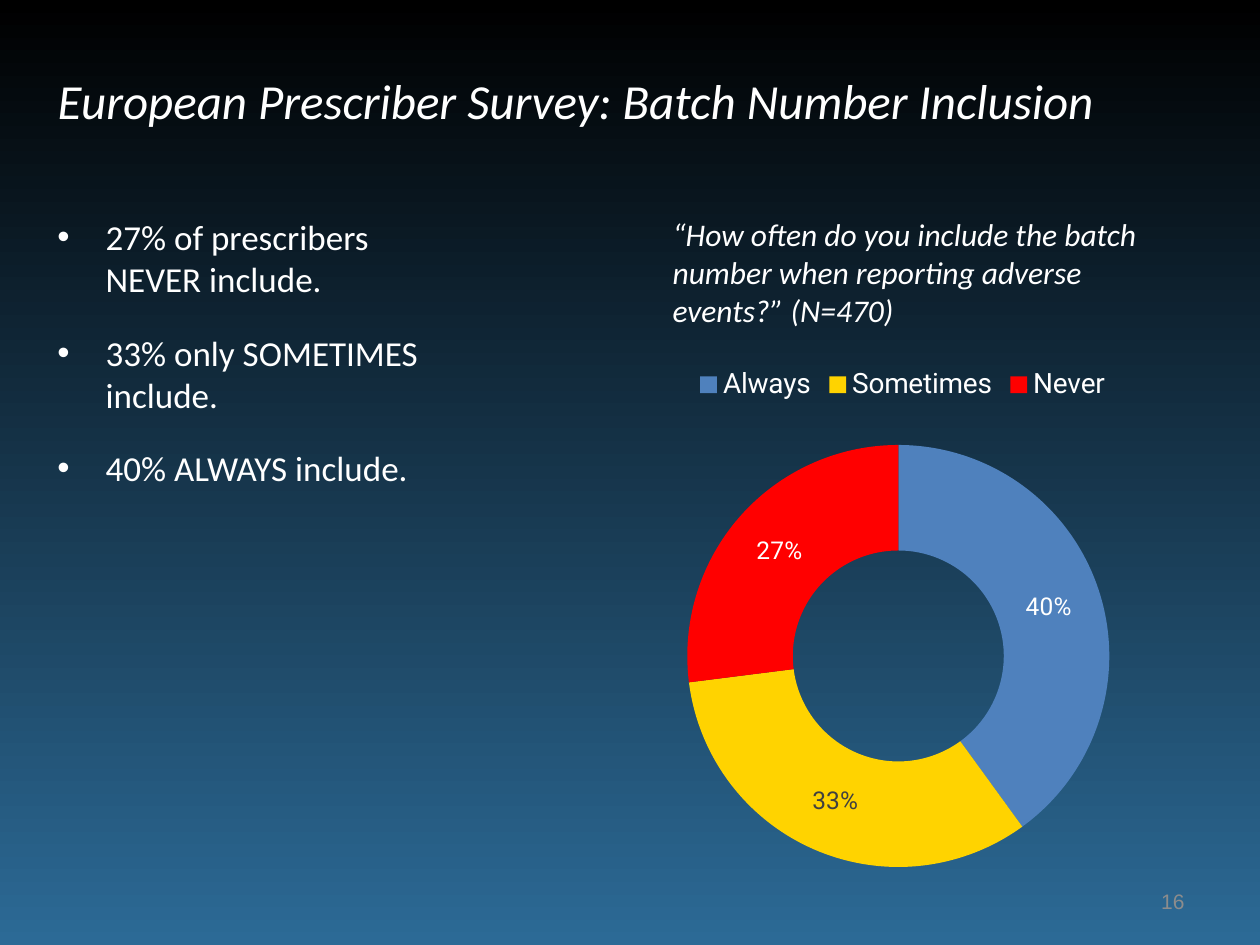
from lxml.etree import SubElement
from pptx import Presentation
from pptx.chart.data import CategoryChartData
from pptx.dml.color import RGBColor
from pptx.enum.chart import XL_CHART_TYPE as ChartType, XL_LEGEND_POSITION as LegendPosition
from pptx.enum.text import MSO_ANCHOR as Anchor, MSO_AUTO_SIZE as AutoSize, PP_ALIGN as Align
from pptx.oxml.ns import qn
from pptx.util import Cm, Pt

COLORS = {
    "sky": "2C6A96", "night": "000000", "text": "FFFFFF", "page": "8C8C8C",
    "always": "4F81BD", "sometimes": "FFD300", "never": "FF0000", "dark": "404040",
}
ANSWERS = [
    ("Always", 0.40, "always", "text"),
    ("Sometimes", 0.33, "sometimes", "dark"),
    ("Never", 0.27, "never", "text"),
]
FINDINGS = [
    ["27% of prescribers ", "NEVER include."],
    ["33% only SOMETIMES include."],
    ["40% ALWAYS include."],
]


def color(name):
    """Return the named colour."""
    return RGBColor.from_string(COLORS[name])


def style(font, size, tint="text", face="Calibri", italic=False):
    """Set size, colour, face and slant of a font."""
    font.size, font.name, font.italic = Pt(size), face, italic
    font.color.rgb = color(tint)


def add_text(paragraph, words, size, **look):
    """Add one styled run to a paragraph."""
    run = paragraph.add_run()
    run.text = words
    style(run.font, size, **look)


def add_frame(slide, box):
    """Add a wrapping text box and return its text frame."""
    frame = slide.shapes.add_textbox(*map(Cm, box)).text_frame
    frame.word_wrap = True
    return frame


def paint_background(slide):
    """Fill the slide with a gradient from blue at the bottom to black."""
    fill = slide.background.fill
    fill.gradient()
    fill.gradient_angle = 90
    for stop, name in zip(fill.gradient_stops, ("sky", "night")):
        stop.color.rgb = color(name)


def place_title(slide, box):
    """Move and format the title placeholder."""
    title = slide.shapes.title
    title.left, title.top, title.width, title.height = map(Cm, box)
    frame = title.text_frame
    frame.auto_size, frame.vertical_anchor = AutoSize.NONE, Anchor.BOTTOM
    heading = frame.paragraphs[0]
    heading.alignment, heading.line_spacing = Align.LEFT, 0.9
    add_text(heading, "European Prescriber Survey: Batch Number Inclusion", 28, italic=True)


def place_findings(slide, box):
    """Add the bulleted findings."""
    frame = add_frame(slide, box)
    for index, lines in enumerate(FINDINGS):
        finding = frame.add_paragraph() if index else frame.paragraphs[0]
        finding.space_before = Pt(18)
        properties = finding._p.get_or_add_pPr()
        properties.set("marL", str(Cm(0.97)))
        properties.set("indent", str(-Cm(0.97)))
        SubElement(properties, qn("a:buFont"), typeface="Arial")
        SubElement(properties, qn("a:buChar"), char="•")
        for number, line in enumerate(lines):
            if number:
                finding.add_line_break()
            add_text(finding, line, 20)


def place_question(slide, box):
    """Add the survey question."""
    question = add_frame(slide, box).paragraphs[0]
    words = "“How often do you include the batch number when reporting adverse events?” (N=470)"
    add_text(question, words, 18, italic=True)


def set_plot_area(chart, **shares):
    """Fix the inner plot area as shares of the chart box."""
    plot_area = chart._chartSpace.chart.plotArea
    for old in plot_area.findall(qn("c:layout")):
        plot_area.remove(old)
    layout = SubElement(plot_area, qn("c:layout"))
    plot_area.insert(0, layout)
    manual = SubElement(layout, qn("c:manualLayout"))
    settings = {"layoutTarget": "inner", "xMode": "edge", "yMode": "edge", **shares}
    for tag, value in settings.items():
        SubElement(manual, qn(f"c:{tag}"), val=str(value))


def place_answers(slide, box):
    """Add the doughnut chart of answers."""
    data = CategoryChartData(number_format="0%")
    data.categories = [answer[0] for answer in ANSWERS]
    data.add_series("Series 1", [answer[1] for answer in ANSWERS])
    chart = slide.shapes.add_chart(ChartType.DOUGHNUT, *map(Cm, box), data).chart
    chart.has_title = False
    style(chart.font, 14, face="Roboto")
    chart.has_legend = True
    chart.legend.position = LegendPosition.TOP
    chart.legend.include_in_layout = False
    style(chart.legend.font, 16, face="Roboto")
    set_plot_area(chart, x=0.23, y=0.17, w=0.53, h=0.79)
    plot = chart.plots[0]
    plot.vary_by_categories = True
    for index, (_, _, tint, label_tint) in enumerate(ANSWERS):
        point = plot.series[0].points[index]
        point.format.fill.solid()
        point.format.fill.fore_color.rgb = color(tint)
        point.format.line.fill.background()
        style(point.data_label.font, 14, label_tint, "Roboto")


def place_page_number(slide, box):
    """Add the page number at the lower right."""
    frame = add_frame(slide, box)
    frame.vertical_anchor = Anchor.MIDDLE
    number = frame.paragraphs[0]
    number.alignment = Align.RIGHT
    add_text(number, "16", 12, tint="page", face="Arial")


def main():
    """Build and save the slide."""
    deck = Presentation()
    deck.slide_width, deck.slide_height = Cm(25.4), Cm(19.05)
    slide = deck.slides.add_slide(deck.slide_layouts[5])
    paint_background(slide)
    place_title(slide, (0.91, 0.66, 23.67, 2.08))
    place_page_number(slide, (18.21, 17.65, 5.92, 1.02))
    place_findings(slide, (0.91, 4.22, 10.03, 5.82))
    place_answers(slide, (9.75, 7.14, 16.89, 10.77))
    place_question(slide, (13.31, 4.22, 10.82, 2.57))
    deck.save("out.pptx")


if __name__ == "__main__":
    main()
